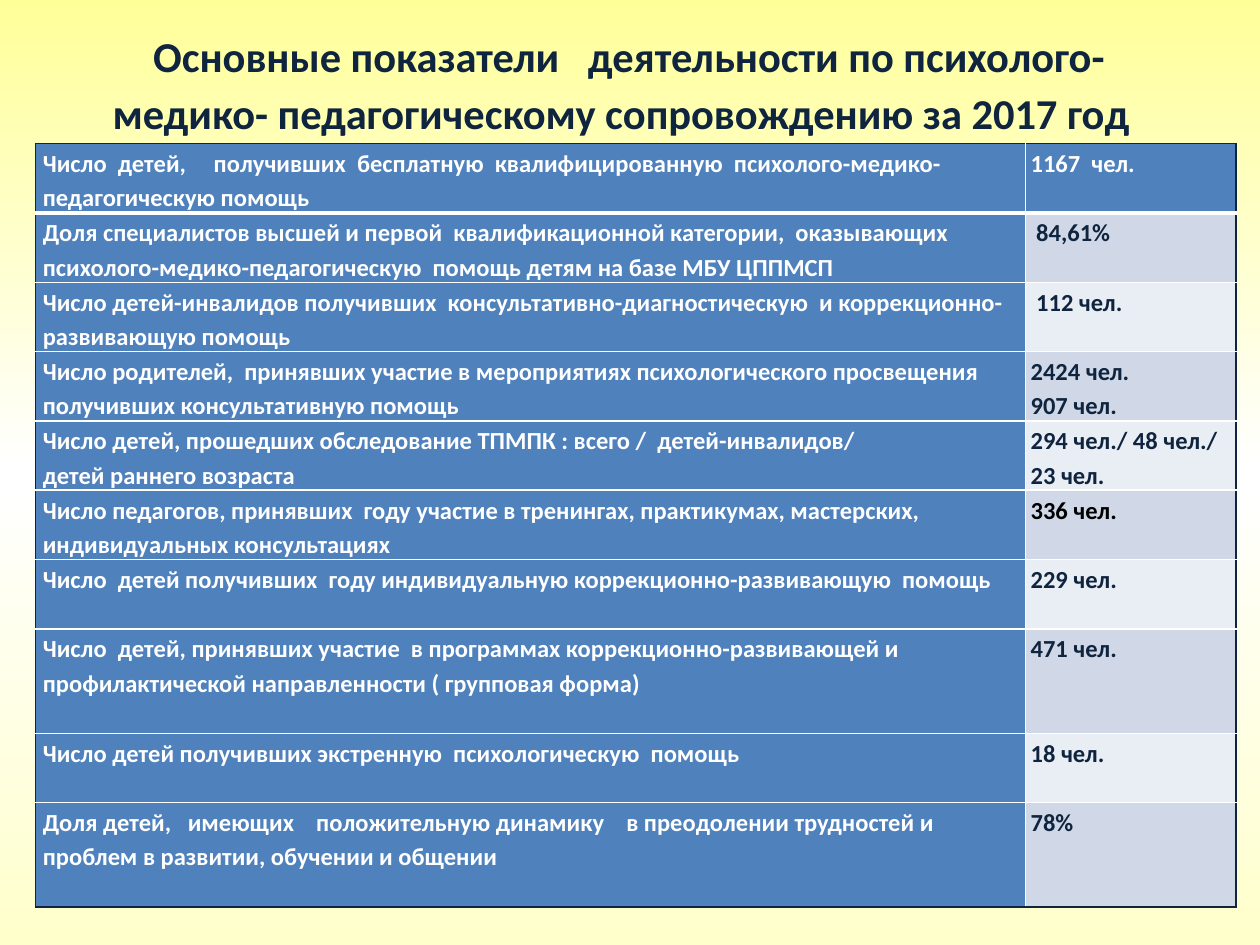
from dataclasses import dataclass

from lxml.etree import SubElement
from pptx import Presentation
from pptx.dml.color import RGBColor
from pptx.enum.text import MSO_ANCHOR, PP_ALIGN
from pptx.oxml import parse_xml
from pptx.oxml.ns import qn
from pptx.util import Inches, Pt

NAVY, WHITE, BLACK = "0F243E", "FFFFFF", "000000"
BLUE, BAND_DARK, BAND_LIGHT = "4F81BD", "D0D8E8", "E9EDF4"
LINE_ROW = 0.55
TALL_ROW = 0.83
COLUMNS = (7.86, 1.67)
SIDE_INSETS = (0.06, 0.04)
BACKGROUND_STOPS = ((0, "FFFF99"), (50, WHITE), (100, "FFFFCC"))


@dataclass(frozen=True)
class Indicator:
    label: str
    value: str
    height: float = LINE_ROW
    value_color: str = NAVY


INDICATORS = (
    Indicator("Число  детей,     получивших  бесплатную  квалифицированную  "
              "психолого-медико-педагогическую помощь", "1167  чел.", value_color=WHITE),
    Indicator("Доля специалистов высшей и первой  квалификационной категории,  оказывающих "
              "психолого-медико-педагогическую  помощь детям на базе МБУ ЦППМСП", " 84,61%"),
    Indicator("Число детей-инвалидов получивших  консультативно-диагностическую  "
              "и коррекционно-развивающую помощь", " 112 чел."),
    Indicator("Число родителей,  принявших участие в мероприятиях психологического "
              "просвещения получивших консультативную помощь", "2424 чел.\n907 чел."),
    Indicator("Число детей, прошедших обследование ТПМПК : всего /  детей-инвалидов/\n"
              "детей раннего возраста", "294 чел./ 48 чел./\n23 чел."),
    Indicator("Число педагогов, принявших  году участие в тренингах, практикумах, мастерских, "
              "индивидуальных консультациях", "336 чел.", value_color=BLACK),
    Indicator("Число  детей получивших  году индивидуальную коррекционно-развивающую  помощь",
              "229 чел."),
    Indicator("Число  детей, принявших участие  в программах коррекционно-развивающей и "
              "профилактической направленности ( групповая форма)", "471 чел.", TALL_ROW),
    Indicator("Число детей получивших экстренную  психологическую  помощь", "18 чел."),
    Indicator("Доля детей,   имеющих    положительную динамику    в преодолении трудностей и "
              "проблем в развитии, обучении и общении", "78%", TALL_ROW),
)


def rgb(value: str) -> RGBColor:
    return RGBColor.from_string(value)


def add_span(para, text: str, size: float, color: str, bold: bool) -> None:
    span = para.add_run()
    span.text = text
    for name, value in {"name": "Calibri", "size": Pt(size), "bold": bold}.items():
        setattr(span.font, name, value)
    span.font.color.rgb = rgb(color)


def paint_background(slide) -> None:
    stops = "".join(f'<a:gs pos="{share * 1000}"><a:srgbClr val="{color}"/></a:gs>'
                    for share, color in BACKGROUND_STOPS)
    background = parse_xml(
        '<p:bg xmlns:p="http://schemas.openxmlformats.org/presentationml/2006/main" '
        'xmlns:a="http://schemas.openxmlformats.org/drawingml/2006/main"><p:bgPr>'
        f'<a:gradFill><a:gsLst>{stops}</a:gsLst><a:lin ang="5400000" scaled="0"/></a:gradFill>'
        '<a:effectLst/></p:bgPr></p:bg>')
    slide.element.find(qn("p:cSld")).insert(0, background)


def add_title(slide) -> None:
    box = slide.shapes.add_textbox(Inches(0.43), Inches(0.03), Inches(9), Inches(1.06))
    frame = box.text_frame
    frame.word_wrap = True
    frame.vertical_anchor = MSO_ANCHOR.MIDDLE
    para = frame.paragraphs[0]
    para.alignment = PP_ALIGN.CENTER
    add_span(para, " ", 39.6, BLACK, False)
    add_span(para, "Основные показатели   деятельности по психолого-медико- "
                   "педагогическому сопровождению за 2017 год", 24.3, NAVY, True)


def set_borders(cell, row: int, column: int) -> None:
    """Navy round the table, white inside, with a thick rule under the first row."""
    last = len(INDICATORS) - 1
    borders = {
        "L": (NAVY if column == 0 else WHITE, 1),
        "R": (NAVY if column == 1 else WHITE, 1),
        "T": (NAVY if row == 0 else WHITE, 3 if row == 1 else 1),
        "B": (NAVY if row == last else WHITE, 3 if row == 0 else 1),
    }
    properties = cell._tc.get_or_add_tcPr()
    for side, (color, width) in borders.items():
        line = SubElement(properties, qn(f"a:ln{side}"), w=str(Pt(width)))
        SubElement(SubElement(line, qn("a:solidFill")), qn("a:srgbClr"), val=color)


def fill_cell(cell, text: str, color: str, fill: str, side_inset: float) -> None:
    margins = {"margin_left": side_inset, "margin_right": side_inset,
               "margin_top": 0.01, "margin_bottom": 0}
    for name, value in margins.items():
        setattr(cell, name, Inches(value))
    cell.fill.solid()
    cell.fill.fore_color.rgb = rgb(fill)
    for index, line in enumerate(text.split("\n")):
        frame = cell.text_frame
        para = frame.add_paragraph() if index else frame.paragraphs[0]
        para.line_spacing = 1.15
        add_span(para, line, 14, color, True)


def add_indicator_table(slide) -> None:
    height = sum(item.height for item in INDICATORS)
    table = slide.shapes.add_table(len(INDICATORS), len(COLUMNS), Inches(0.28), Inches(1.14),
                                   Inches(sum(COLUMNS)), Inches(height)).table
    table.horz_banding = False
    for column, width in zip(table.columns, COLUMNS):
        column.width = Inches(width)
    for row, item in enumerate(INDICATORS):
        table.rows[row].height = Inches(item.height)
        band = BLUE if row == 0 else BAND_DARK if row % 2 else BAND_LIGHT
        contents = ((item.label, WHITE, BLUE), (item.value, item.value_color, band))
        for column, (text, color, fill) in enumerate(contents):
            cell = table.cell(row, column)
            set_borders(cell, row, column)
            fill_cell(cell, text, color, fill, SIDE_INSETS[column])


def main() -> None:
    deck = Presentation()
    deck.slide_width, deck.slide_height = Inches(10), Inches(7.5)
    slide = deck.slides.add_slide(deck.slide_layouts[6])
    paint_background(slide)
    add_title(slide)
    add_indicator_table(slide)
    deck.save("out.pptx")


if __name__ == "__main__":
    main()
